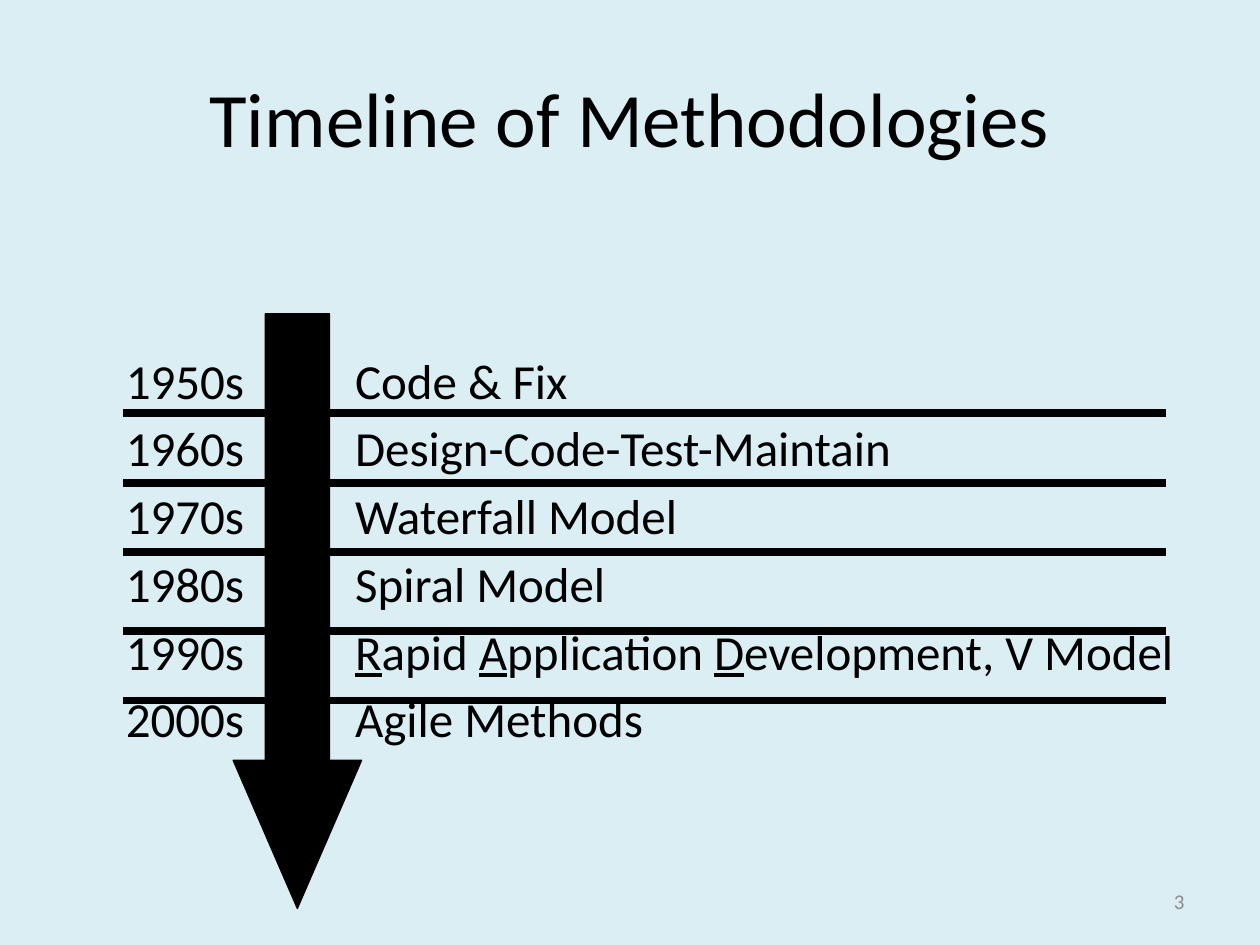
from lxml.etree import SubElement
from pptx import Presentation
from pptx.dml.color import RGBColor
from pptx.enum.shapes import MSO_CONNECTOR as CONN, MSO_SHAPE as SHAPE
from pptx.enum.text import MSO_ANCHOR as ANCHOR, PP_ALIGN as ALIGN
from pptx.oxml.ns import qn
from pptx.util import Inches, Pt

WIDTH, HEIGHT = 10, 7.5
COLORS = {"background": "DBEEF4", "ink": "000000", "muted": "8C8C8C"}
FONT = "Calibri"

# Each method is a list of (text, underlined) parts
DECADES = [
    ("1950s", [("Code & Fix", False)]),
    ("1960s", [("Design-Code-Test-Maintain", False)]),
    ("1970s", [("Waterfall Model", False)]),
    ("1980s", [("Spiral Model", False)]),
    ("1990s", [("R", True), ("apid ", False), ("A", True),
               ("pplication ", False), ("D", True),
               ("evelopment, V Model", False)]),
    ("2000s", [("Agile Methods", False)]),
]


def color(name):
    return RGBColor.from_string(COLORS[name])


def add_text_box(s, box, anchor=ANCHOR.TOP):
    tf = s.shapes.add_textbox(*map(Inches, box)).text_frame
    tf.word_wrap = True
    tf.vertical_anchor = anchor
    return tf


def add_run(p, text, size, ink="ink", underline=False):
    r = p.add_run()
    r.text = text
    style = {"name": FONT, "size": Pt(size), "underline": underline}
    for key, value in style.items():
        setattr(r.font, key, value)
    r.font.color.rgb = color(ink)


def add_label(s, box, text, size, align, ink="ink"):
    p = add_text_box(s, box, ANCHOR.MIDDLE).paragraphs[0]
    p.alignment = align
    add_run(p, text, size, ink)


def add_decades(s, box, method_column):
    """One paragraph per decade, with the methods aligned at a tab stop."""
    tf = add_text_box(s, box)
    for i, (decade, method) in enumerate(DECADES):
        p = tf.paragraphs[0] if i == 0 else tf.add_paragraph()
        p.space_before = Pt(5.1)
        tabs = SubElement(p._p.get_or_add_pPr(), qn("a:tabLst"))
        SubElement(tabs, qn("a:tab"), pos=str(Inches(method_column)), algn="l")
        add_run(p, decade + "\t", 28)
        for text, underline in method:
            add_run(p, text, 28, underline=underline)


def add_arrow(s, box):
    sp = s.shapes.add_shape(SHAPE.DOWN_ARROW, *map(Inches, box))
    sp.adjustments[0], sp.adjustments[1] = 0.5, 1.153
    sp.shadow.inherit = False
    sp.fill.solid()
    sp.fill.fore_color.rgb = color("ink")
    sp.line.color.rgb = color("ink")
    sp.line.width = Pt(0.75)


def add_rules(s, left, right, top, row):
    """Rules between decades; the last two sit slightly lower."""
    for i in range(len(DECADES) - 1):
        y = top + i * row + (0.08 if i >= 3 else 0)
        line = s.shapes.add_connector(
            CONN.STRAIGHT, *map(Inches, (left, y, right, y)))
        line.line.color.rgb = color("ink")
        line.line.width = Pt(4.5)
        SubElement(line._element.spPr, qn("a:effectLst"))


def add_timeline(s, box):
    left, top, width, height = box
    add_decades(s, (left, top + 0.55, width, height - 0.55), 1.82)
    add_arrow(s, (left + 0.95, top + 0.31, 1.02, 4.72))
    add_rules(s, left + 0.08, left + 8.35, top + 1.1, 0.55)


def main():
    prs = Presentation()
    prs.slide_width, prs.slide_height = Inches(WIDTH), Inches(HEIGHT)
    s = prs.slides.add_slide(prs.slide_layouts[6])
    s.background.fill.solid()
    s.background.fill.fore_color.rgb = color("background")

    # Title, page number and timeline
    margin = 0.05 * WIDTH
    add_label(s, (margin, 0.04 * HEIGHT, WIDTH - 2 * margin, HEIGHT / 6),
              "Timeline of Methodologies", 44, ALIGN.CENTER)
    add_label(s, (7.17, 6.95, 2.33, 0.4), "3", 12, ALIGN.RIGHT, "muted")
    add_timeline(s, (0.09 * WIDTH, 2.18, 8.59, 0.6 * HEIGHT))

    prs.save("out.pptx")


if __name__ == "__main__":
    main()
